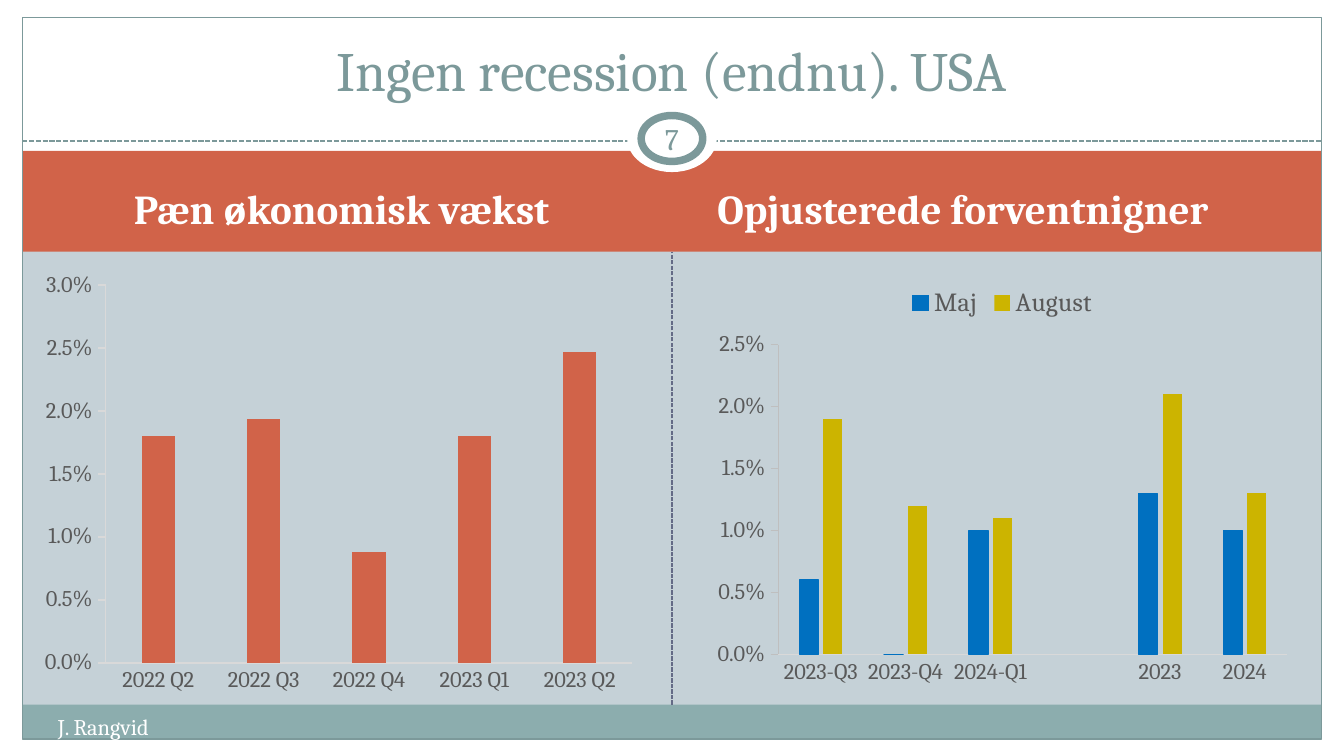
from dataclasses import dataclass

from lxml import etree
from pptx import Presentation
from pptx.chart.data import CategoryChartData
from pptx.dml.color import RGBColor
from pptx.enum.chart import XL_CHART_TYPE, XL_LEGEND_POSITION, XL_TICK_MARK
from pptx.enum.dml import MSO_LINE
from pptx.enum.shapes import MSO_CONNECTOR, MSO_SHAPE
from pptx.enum.text import MSO_ANCHOR, PP_ALIGN
from pptx.oxml import parse_xml
from pptx.oxml.ns import nsdecls, qn
from pptx.util import Pt

RECTANGLE, OVAL = MSO_SHAPE.RECTANGLE, MSO_SHAPE.OVAL
LEFT, CENTER = PP_ALIGN.LEFT, PP_ALIGN.CENTER
TOP, MIDDLE, BOTTOM = MSO_ANCHOR.TOP, MSO_ANCHOR.MIDDLE, MSO_ANCHOR.BOTTOM
STRAIGHT, DASH = MSO_CONNECTOR.STRAIGHT, MSO_LINE.SQUARE_DOT
COLUMNS, LEGEND_TOP = XL_CHART_TYPE.COLUMN_CLUSTERED, XL_LEGEND_POSITION.TOP
TICK_NONE, TICK_OUT = XL_TICK_MARK.NONE, XL_TICK_MARK.OUTSIDE

FONT = "Cambria"
WHITE, RED, TEAL, FOOTER = "FFFFFF", "D16349", "7C999A", "8CADAE"
BACKGROUND, DIVIDER, GRAY, PALE = "C5D1D7", "646B86", "595959", "D9D9D9"
BLUE, YELLOW = "0070C0", "CCB400"
WIDTH, HEIGHT, MARGIN = 720, 405, 12
INNER = WIDTH - 2 * MARGIN
MIDDLE_X, BADGE_Y, RULE_Y = WIDTH / 2, 74.2, 75.6
COLUMN_WIDTH, CHART_TOP, CHART_HEIGHT = 318, 146, 225.5


@dataclass
class Area:
    left: float
    top: float
    width: float
    height: float

    def points(self) -> list:
        return [Pt(v) for v in (self.left, self.top, self.width, self.height)]


@dataclass
class Series:
    name: str
    values: tuple
    color: str
    outlined: bool = False


@dataclass
class ColumnChart:
    area: Area
    categories: tuple
    series: tuple
    maximum: float
    axis_color: str
    plot: tuple = ()
    legend: bool = False


def rgb(color: str) -> RGBColor:
    return RGBColor.from_string(color)


def style_font(font, size: float, color: str, bold: bool = False) -> None:
    font.name, font.size, font.bold = FONT, Pt(size), bold
    font.color.rgb = rgb(color)


def style_line(line, color: str, width: float = 0.75) -> None:
    line.color.rgb = rgb(color)
    line.width = Pt(width)


def add_block(page, area: Area, fill: str = "", line: str = "", width: float = 0.75,
              kind=RECTANGLE):
    shape = page.shapes.add_shape(kind, *area.points())
    shape.shadow.inherit = False
    if fill:
        shape.fill.solid()
        shape.fill.fore_color.rgb = rgb(fill)
    else:
        shape.fill.background()
    if line:
        style_line(shape.line, line, width)
    else:
        shape.line.fill.background()
    return shape


def add_dashes(page, start: tuple, end: tuple, color: str, width: float):
    line = page.shapes.add_connector(STRAIGHT, *[Pt(v) for v in start + end])
    style_line(line.line, color, width)
    line.line.dash_style = DASH
    etree.SubElement(line._element.spPr, qn("a:effectLst"))
    return line


def add_text(page, area: Area, text: str, *, size: float, color: str = WHITE,
             bold: bool = False, align=LEFT, anchor=MIDDLE, inset: float = 7.2) -> None:
    frame = page.shapes.add_textbox(*area.points()).text_frame
    frame.word_wrap = True
    frame.vertical_anchor = anchor
    frame.margin_left = frame.margin_right = Pt(inset)
    para = frame.paragraphs[0]
    para.alignment = align
    span = para.add_run()
    span.text = text
    style_font(span.font, size, color, bold)


def add_columns(page, spec: ColumnChart) -> None:
    data = CategoryChartData(number_format="0.0%")
    data.categories = spec.categories
    for item in spec.series:
        data.add_series(item.name, item.values)
    chart = page.shapes.add_chart(COLUMNS, *spec.area.points(), data).chart
    style_font(chart.font, 10, "000000")
    chart.has_title = False
    chart.has_legend = spec.legend
    if spec.legend:
        chart.legend.position = LEGEND_TOP
        chart.legend.include_in_layout = False
        style_font(chart.legend.font, 14, GRAY)

    for axis, tick, color in ((chart.category_axis, TICK_NONE, PALE),
                              (chart.value_axis, TICK_OUT, spec.axis_color)):
        axis.has_major_gridlines = False
        axis.major_tick_mark, axis.minor_tick_mark = tick, TICK_NONE
        style_font(axis.tick_labels.font, 12, GRAY)
        style_line(axis.format.line, color)
    values = chart.value_axis
    values.minimum_scale, values.maximum_scale, values.major_unit = 0, spec.maximum, 0.005
    values.tick_labels.number_format = "0.0%"
    values.tick_labels.number_format_is_linked = False

    plot = chart.plots[0]
    plot.gap_width, plot.overlap, plot.vary_by_categories = 219, -27, False
    for series, item in zip(plot.series, spec.series):
        series.format.fill.solid()
        series.format.fill.fore_color.rgb = rgb(item.color)
        if item.outlined:
            style_line(series.format.line, item.color)
    if spec.plot:
        place_plot(chart, spec.plot)


def place_plot(chart, fractions: tuple) -> None:
    area = chart._chartSpace.chart.plotArea
    for old in area.findall(qn("c:layout")):
        area.remove(old)
    sizes = "".join(f'<c:{key} val="{value}"/>' for key, value in zip("xywh", fractions))
    area.insert(0, parse_xml(
        f'<c:layout {nsdecls("c")}><c:manualLayout><c:layoutTarget val="inner"/>'
        f'<c:xMode val="edge"/><c:yMode val="edge"/>{sizes}</c:manualLayout></c:layout>'))


def centered(width: float, height: float) -> Area:
    return Area(MIDDLE_X - width / 2, BADGE_Y - height / 2, width, height)


def main() -> None:
    deck = Presentation()
    deck.slide_width, deck.slide_height = Pt(WIDTH), Pt(HEIGHT)
    page = deck.slides.add_slide(deck.slide_layouts[6])
    page.background.fill.solid()
    page.background.fill.fore_color.rgb = rgb(BACKGROUND)

    for area in (Area(0, 0, WIDTH, 86), Area(0, 396, WIDTH, 9),
                 Area(0, 0, MARGIN, HEIGHT), Area(WIDTH - MARGIN, 0, MARGIN, HEIGHT)):
        add_block(page, area, WHITE)
    banner = add_block(page, Area(MARGIN, 80.8, INNER, 54), RED)
    footer = add_block(page, Area(MARGIN, 377.5, INNER, 18.5), FOOTER)
    divider = add_dashes(page, (MIDDLE_X, 377.5), (MIDDLE_X, 134.8), DIVIDER, 0.75)
    divider.begin_connect(footer, 0)
    divider.end_connect(banner, 2)
    add_dashes(page, (MARGIN, RULE_Y), (WIDTH - MARGIN, RULE_Y), TEAL, 0.9)
    add_block(page, Area(MARGIN, 9.2, INNER, 386.8), line=TEAL)
    add_block(page, centered(48, 36), WHITE, kind=OVAL)
    add_block(page, centered(33, 24.6), WHITE, TEAL, 4, OVAL)

    add_text(page, Area(24, 90, COLUMN_WIDTH, 43.2), "Pæn økonomisk vækst",
             size=22, bold=True, align=CENTER)
    add_text(page, Area(377.3, 90, COLUMN_WIDTH, 43.2), "Opjusterede forventnigner",
             size=22, bold=True)
    add_text(page, Area(24, 378.7, 282, 21.6), "J. Rangvid", size=12, anchor=TOP)
    add_text(page, Area(342, 61.2, 36, 26), "7", size=16, color=TEAL, align=CENTER, inset=3.6)
    add_text(page, Area(24, 13.7, 672, 44.6), "Ingen recession (endnu). USA",
             size=29.7, color=TEAL, align=CENTER, anchor=BOTTOM)

    add_columns(page, ColumnChart(
        Area(378, CHART_TOP, COLUMN_WIDTH, CHART_HEIGHT),
        ("2023-Q3", "2023-Q4", "2024-Q1", "", "2023", "2024"),
        (Series("Maj", (0.006, 0, 0.01, None, 0.013, 0.01), BLUE, outlined=True),
         Series("August", (0.019, 0.012, 0.011, None, 0.021, 0.013), YELLOW)),
        maximum=0.025, axis_color="BFBFBF", legend=True))
    add_columns(page, ColumnChart(
        Area(24, CHART_TOP, COLUMN_WIDTH, CHART_HEIGHT),
        ("2022 Q2", "2022 Q3", "2022 Q4", "2023 Q1", "2023 Q2"),
        (Series("Series 1", (0.018, 0.0194, 0.0088, 0.018, 0.0247), RED),),
        maximum=0.03, axis_color=PALE, plot=(0.1, 0.03, 0.89, 0.9)))
    deck.save("out.pptx")


if __name__ == "__main__":
    main()
